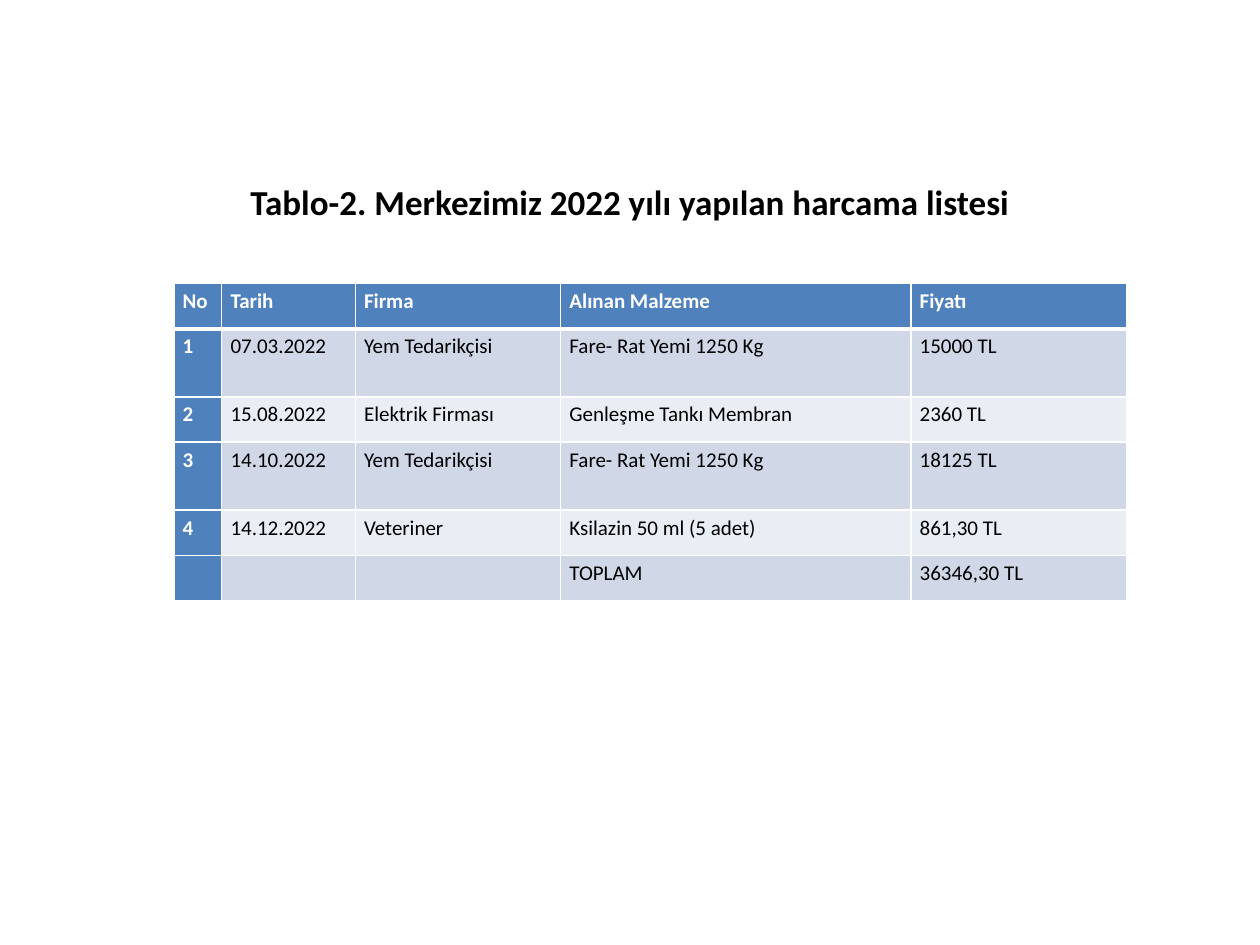
from dataclasses import dataclass

import pptx
import pptx.dml.color
import pptx.enum.text
import pptx.oxml
import pptx.oxml.ns
import pptx.presentation
import pptx.slide
import pptx.table
import pptx.util
from pptx.dml.color import RGBColor
from pptx.util import Inches

BLACK = RGBColor(0x00, 0x00, 0x00)
WHITE = RGBColor(0xFF, 0xFF, 0xFF)
BLUE = RGBColor(0x4F, 0x81, 0xBD)
BAND_DARK = RGBColor(0xD0, 0xD8, 0xE8)
BAND_LIGHT = RGBColor(0xE9, 0xED, 0xF4)
FONT = "Calibri"
THIN = 1
THICK = 3


@dataclass(frozen=True)
class Column:
    heading: str
    width: float


@dataclass(frozen=True)
class Expense:
    number: str
    date: str
    company: str
    material: str
    price: str
    height: float = 0.36

    def texts(self) -> list[str]:
        return [self.number, self.date, self.company, self.material, self.price]


COLUMNS = [
    Column("No", 0.38),
    Column("Tarih", 1.06),
    Column("Firma", 1.63),
    Column("Alınan Malzeme", 2.78),
    Column("Fiyatı", 1.71),
]
EXPENSES = [
    Expense("1", "07.03.2022", "Yem Tedarikçisi", "Fare- Rat Yemi 1250 Kg", "15000 TL", 0.54),
    Expense("2", "15.08.2022", "Elektrik Firması", "Genleşme Tankı Membran", "2360 TL"),
    Expense("3", "14.10.2022", "Yem Tedarikçisi", "Fare- Rat Yemi 1250 Kg", "18125 TL", 0.54),
    Expense("4", "14.12.2022", "Veteriner", "Ksilazin 50 ml (5 adet)", "861,30 TL"),
    Expense("", "", "", "TOPLAM", "36346,30 TL"),
]
HEADER = Expense(*[column.heading for column in COLUMNS])


def format_runs(paragraph, size: int, color: RGBColor, bold: bool) -> None:
    for run in paragraph.runs:
        run.font.name = FONT
        run.font.size = pptx.util.Pt(size)
        run.font.bold = bold
        run.font.color.rgb = color


def set_borders(cell: pptx.table._Cell, top: int, bottom: int) -> None:
    properties = cell._tc.get_or_add_tcPr()
    widths = {"lnL": THIN, "lnR": THIN, "lnT": top, "lnB": bottom}
    for position, (side, width) in enumerate(widths.items()):
        border = pptx.oxml.parse_xml(
            f'<a:{side} {pptx.oxml.ns.nsdecls("a")} w="{pptx.util.Pt(width)}">'
            f'<a:solidFill><a:srgbClr val="{WHITE}"/></a:solidFill></a:{side}>'
        )
        properties.insert(position, border)


def fill_cell(cell: pptx.table._Cell, text: str, row: int, column: int) -> None:
    emphasized = row == 0 or column == 0
    band = BAND_DARK if row % 2 else BAND_LIGHT
    cell.fill.solid()
    cell.fill.fore_color.rgb = BLUE if emphasized else band
    cell.margin_left = cell.margin_right = Inches(0.07)
    cell.margin_top = Inches(0.01)
    cell.margin_bottom = 0
    cell.text_frame.text = text
    paragraph = cell.text_frame.paragraphs[0]
    paragraph.line_spacing = 1.15
    format_runs(paragraph, 12, WHITE if emphasized else BLACK, emphasized)
    set_borders(cell, THICK if row == 1 else THIN, THICK if row == 0 else THIN)


def add_title(slide: pptx.slide.Slide, presentation: pptx.presentation.Presentation) -> None:
    title = slide.shapes.title
    title.left = title.top = 0
    title.width = presentation.slide_width
    title.height = presentation.slide_height
    frame = title.text_frame
    frame.text = "Tablo-2. Merkezimiz 2022 yılı yapılan harcama listesi"
    frame.auto_size = pptx.enum.text.MSO_AUTO_SIZE.NONE
    frame.vertical_anchor = pptx.enum.text.MSO_ANCHOR.TOP
    frame.margin_top = Inches(1.43)
    paragraph = frame.paragraphs[0]
    paragraph.alignment = pptx.enum.text.PP_ALIGN.CENTER
    format_runs(paragraph, 20, BLACK, True)


def add_expense_table(slide: pptx.slide.Slide) -> None:
    rows = [HEADER, *EXPENSES]
    table = slide.shapes.add_table(
        len(rows), len(COLUMNS), Inches(1.38), Inches(2.25),
        Inches(sum(column.width for column in COLUMNS)),
        Inches(sum(row.height for row in rows)),
    ).table
    table.first_col = True
    for index, column in enumerate(COLUMNS):
        table.columns[index].width = Inches(column.width)
    for row_index, row in enumerate(rows):
        table.rows[row_index].height = Inches(row.height)
        for column_index, text in enumerate(row.texts()):
            fill_cell(table.cell(row_index, column_index), text, row_index, column_index)


def main() -> None:
    presentation = pptx.Presentation()
    presentation.slide_width = Inches(10)
    presentation.slide_height = Inches(7.5)
    slide = presentation.slides.add_slide(presentation.slide_layouts[5])
    add_title(slide, presentation)
    add_expense_table(slide)
    presentation.save("out.pptx")


if __name__ == "__main__":
    main()
